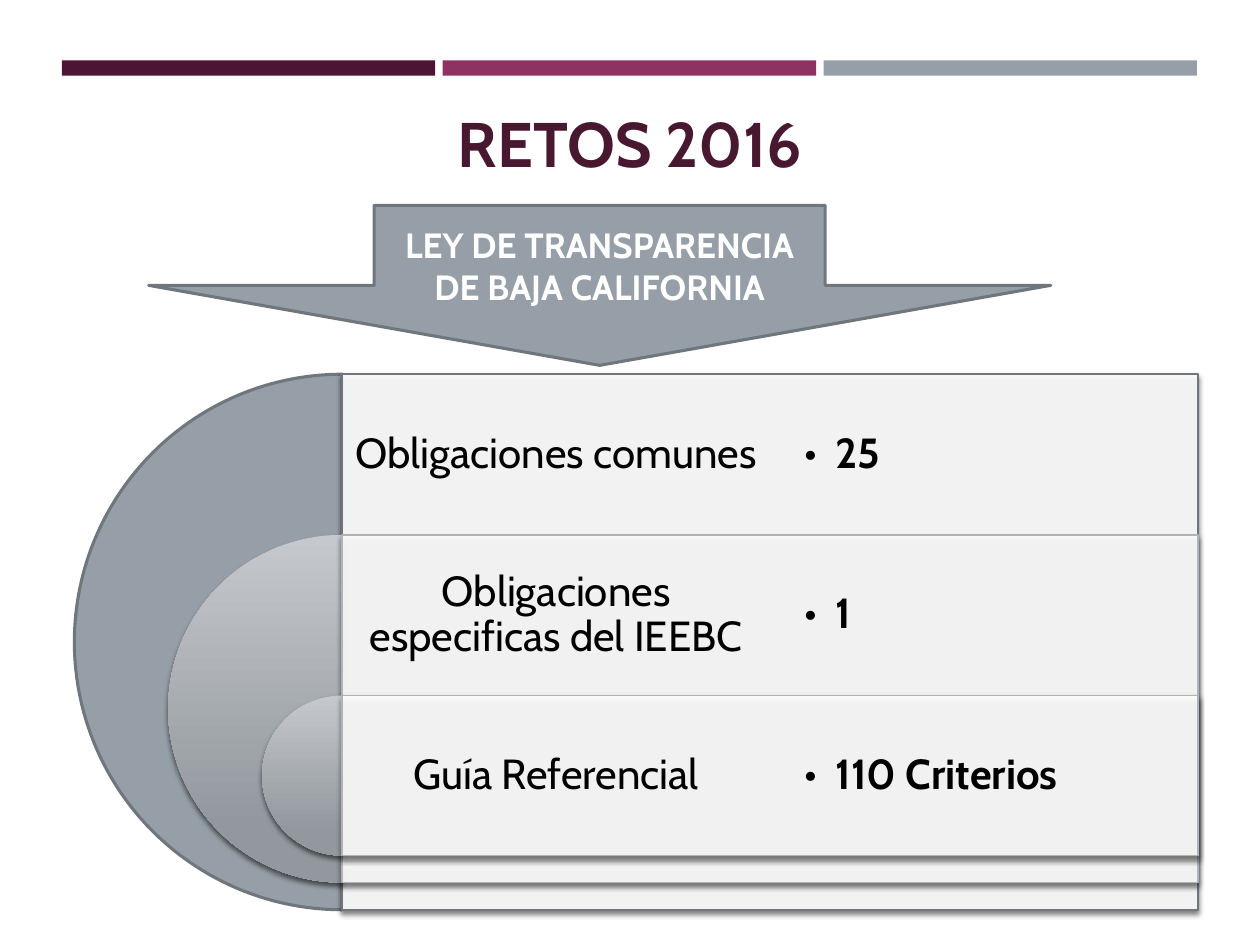
from lxml import etree
from pptx import Presentation
from pptx.dml.color import RGBColor
from pptx.enum import shapes, text
from pptx.oxml import ns
from pptx.util import Inches, Pt

PLUM = RGBColor(0x4D, 0x14, 0x34)
MAGENTA = RGBColor(0x90, 0x31, 0x63)
GREY = RGBColor(0x96, 0x9F, 0xA7)
DARK_GREY = RGBColor(0x6F, 0x76, 0x7C)
EDGE_GREY = RGBColor(0xAF, 0xB4, 0xB9)
LIGHT_STOP = RGBColor(0xC5, 0xC8, 0xCC)
DARK_STOP = RGBColor(0x92, 0x98, 0x9D)
TITLE_COLOR = RGBColor(0x48, 0x18, 0x31)
WHITE = RGBColor(0xFF, 0xFF, 0xFF)
BLACK = RGBColor(0, 0, 0)
FONT = "Cabin"
DUTIES = [
    ("Obligaciones comunes", "25"),
    ("Obligaciones especificas del IEEBC", "1"),
    ("Guía Referencial", "110 Criterios"),
]


def add_child(parent, tag, **attributes):
    return etree.SubElement(parent, ns.qn(tag), attributes)


def add_run(paragraph, words, size, color, bold=False):
    run = paragraph.add_run()
    run.text = words
    run.font.name = FONT
    run.font.size = Pt(size)
    run.font.bold = bold
    run.font.color.rgb = color


def add_figure(slide, preset, box, fill=None, line=None, line_width=1):
    figure = slide.shapes.add_shape(preset, *map(Inches, box))
    figure.shadow.inherit = False
    if fill is not None:
        figure.fill.solid()
        figure.fill.fore_color.rgb = fill
    if line is None:
        figure.line.fill.background()
    else:
        figure.line.color.rgb = line
        figure.line.width = Pt(line_width)
    return figure


def cast_shadow(figure):
    effects = figure._element.spPr.find(ns.qn("a:effectLst"))
    shadow = add_child(effects, "a:outerShdw", blurRad=str(Pt(3)), dist=str(Pt(2)),
                       dir="5400000", algn="ctr", rotWithShape="0")
    color = add_child(shadow, "a:srgbClr", val="000000")
    add_child(color, "a:alpha", val="55000")


def add_bars(slide, left, top, width, height):
    gap = 0.06
    bar_width = (width - 2 * gap) / 3
    for i, color in enumerate((PLUM, MAGENTA, GREY)):
        add_figure(slide, shapes.MSO_SHAPE.RECTANGLE,
                   (left + i * (bar_width + gap), top, bar_width, height), color)


def add_title(slide, left, top, width, height):
    title = slide.shapes.title
    title.left, title.top = Inches(left), Inches(top)
    title.width, title.height = Inches(width), Inches(height)
    title.text_frame.vertical_anchor = text.MSO_ANCHOR.BOTTOM
    heading = title.text_frame.paragraphs[0]
    heading.alignment = text.PP_ALIGN.CENTER
    add_run(heading, "RETOS 2016", 36, TITLE_COLOR, True)


def add_law_arrow(slide, *box):
    arrow = add_figure(slide, shapes.MSO_SHAPE.DOWN_ARROW, box, GREY, DARK_GREY, 1.75)
    arrow.text_frame.vertical_anchor = text.MSO_ANCHOR.MIDDLE
    law = arrow.text_frame.paragraphs[0]
    law.alignment = text.PP_ALIGN.CENTER
    add_run(law, "LEY DE TRANSPARENCIA DE BAJA CALIFORNIA", 20, WHITE, True)


def add_half_disc(slide, box, outer):
    disc = add_figure(slide, shapes.MSO_SHAPE.PIE, box, GREY if outer else None,
                      DARK_GREY if outer else None, 1.75)
    disc.adjustments[0], disc.adjustments[1] = 54, 162
    if not outer:
        disc.fill.gradient()
        disc.fill.gradient_angle = 270
        stops = zip(disc.fill.gradient_stops, (LIGHT_STOP, DARK_STOP), (0, 0.84))
        for stop, color, position in stops:
            stop.color.rgb = color
            stop.position = position
        cast_shadow(disc)


def add_panel(slide, box, line):
    panel = add_figure(slide, shapes.MSO_SHAPE.RECTANGLE, box, WHITE, line)
    fill_color = panel._element.spPr.find(ns.qn("a:solidFill"))[0]
    add_child(fill_color, "a:alpha", val="90000")
    cast_shadow(panel)


def add_label(slide, box, words, inset, bulleted):
    label = slide.shapes.add_textbox(*map(Inches, box))
    frame = label.text_frame
    frame.word_wrap = True
    frame.vertical_anchor = text.MSO_ANCHOR.MIDDLE
    frame.margin_left = frame.margin_right = Inches(inset)
    frame.margin_top = frame.margin_bottom = Inches(inset)
    paragraph = frame.paragraphs[0]
    paragraph.line_spacing = 0.9
    if bulleted:
        properties = paragraph._p.get_or_add_pPr()
        properties.set("marL", str(Inches(0.25)))
        properties.set("indent", str(-Inches(0.25)))
        add_child(properties, "a:buFont", typeface=FONT)
        add_child(properties, "a:buChar", char="•")
    else:
        paragraph.alignment = text.PP_ALIGN.CENTER
    add_run(paragraph, words, 24, BLACK, bulleted)


def add_target_list(slide, left, top, width, height):
    band = 0.3 * height
    axis = left + height / 2
    panel_width = left + width - axis
    column = panel_width / 2
    for i, (duty, amount) in enumerate(DUTIES):
        band_top = top + i * band
        diameter = height - i * 1.49
        add_half_disc(slide, (axis - diameter / 2, band_top, diameter, diameter), i == 0)
        add_panel(slide, (axis, band_top, panel_width, diameter),
                  EDGE_GREY if i else DARK_GREY)
        add_label(slide, (axis, band_top, column, band), duty, 0.1, False)
        add_label(slide, (axis + column, band_top, column, band), amount, 0.27, True)


def main():
    deck = Presentation()
    deck.slide_width, deck.slide_height = Inches(10), Inches(7.5)
    slide = deck.slides.add_slide(deck.slide_layouts[5])
    add_bars(slide, 0.49, 0.48, 9.01, 0.12)
    add_title(slide, 0, 0.75, 10, 0.73)
    add_law_arrow(slide, 1.18, 1.63, 7.16, 1.27)
    add_target_list(slide, 0.59, 2.97, 8.92, 4.25)
    deck.save("out.pptx")


if __name__ == "__main__":
    main()
